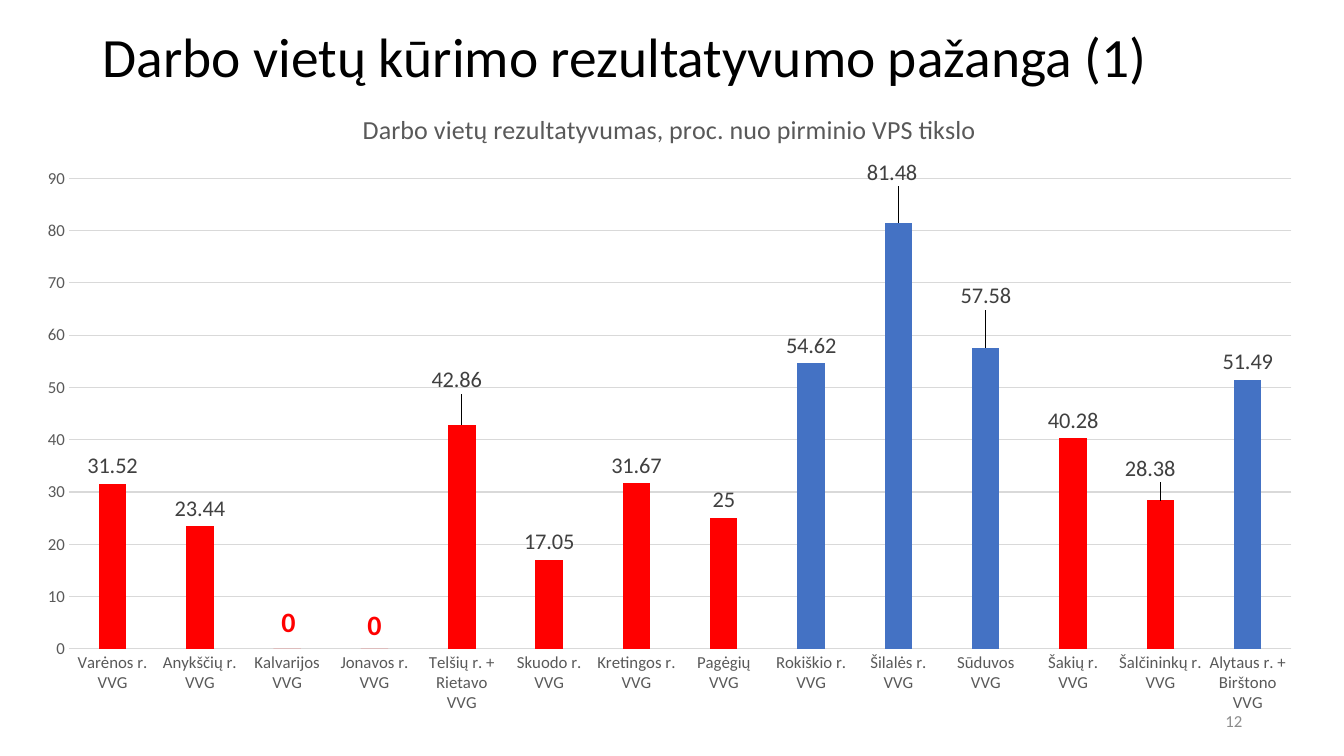
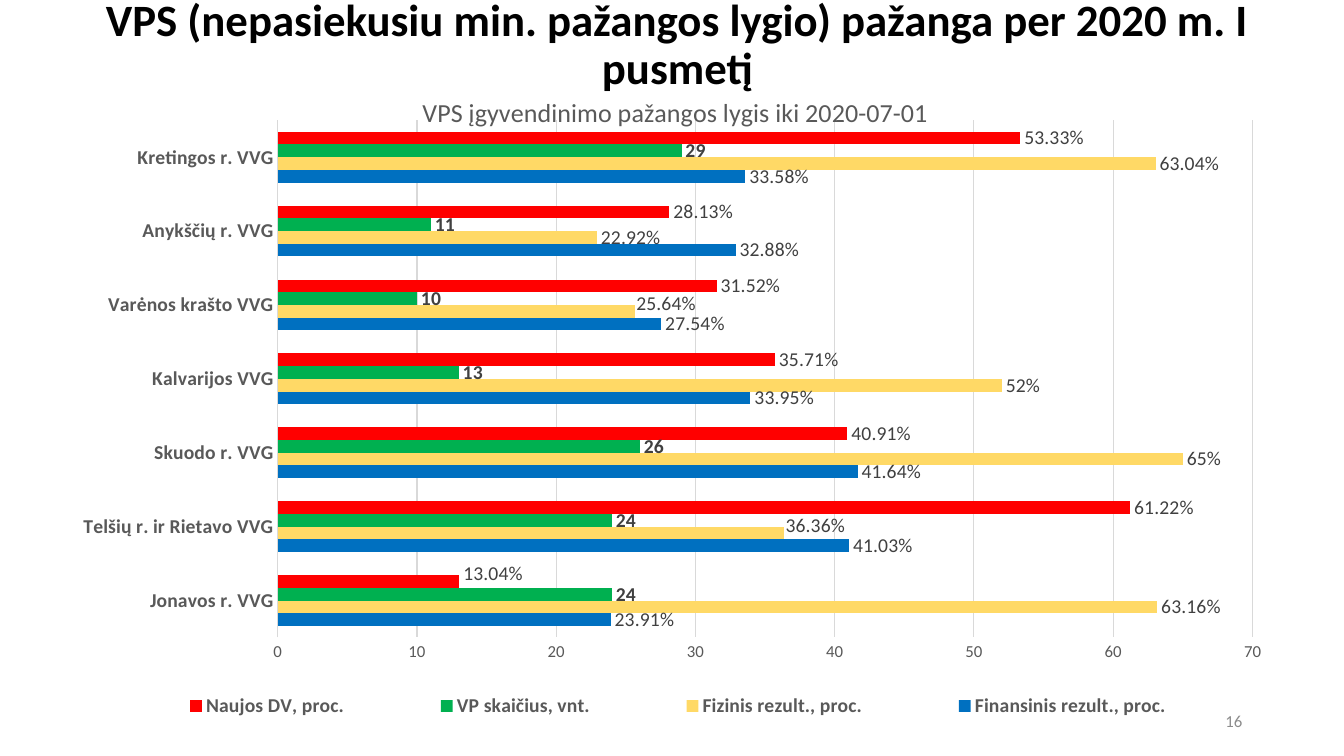
from dataclasses import dataclass, field
from typing import NamedTuple

from lxml import etree
from pptx import Presentation
from pptx.chart.data import CategoryChartData
from pptx.dml.color import RGBColor
from pptx.enum.chart import XL_CHART_TYPE, XL_LABEL_POSITION, XL_LEGEND_POSITION, XL_TICK_MARK
from pptx.enum.text import MSO_ANCHOR, PP_ALIGN
from pptx.oxml.ns import qn
from pptx.util import Inches, Pt

# Shared style
FONT = "Calibri"
BLACK = RGBColor(0x00, 0x00, 0x00)
DARK = RGBColor(0x40, 0x40, 0x40)
GREY = RGBColor(0x59, 0x59, 0x59)
NUMBER_GREY = RGBColor(0x8C, 0x8C, 0x8C)
RULE = RGBColor(0xD9, 0xD9, 0xD9)
RED = RGBColor(0xFF, 0x00, 0x00)
GREEN = RGBColor(0x00, 0xB0, 0x50)
YELLOW = RGBColor(0xFF, 0xD9, 0x66)
BLUE = RGBColor(0x00, 0x70, 0xC0)
GOAL_BLUE = RGBColor(0x44, 0x72, 0xC4)

COLUMN = XL_CHART_TYPE.COLUMN_CLUSTERED
BAR = XL_CHART_TYPE.BAR_CLUSTERED
OUTSIDE = XL_LABEL_POSITION.OUTSIDE_END
BOTTOM = XL_LEGEND_POSITION.BOTTOM
NO_TICK = XL_TICK_MARK.NONE
MIDDLE = MSO_ANCHOR.MIDDLE
LEFT, CENTER, RIGHT = PP_ALIGN.LEFT, PP_ALIGN.CENTER, PP_ALIGN.RIGHT

WIDTH, HEIGHT = Inches(13.33), Inches(7.5)
GOAL = 50  # percent from which a column turns blue
PERCENT = 'General"%"'
CHART_2012 = "http://schemas.microsoft.com/office/drawing/2012/chart"
LABEL_EXTENSION = "{CE6537A1-D6FC-4f65-9D91-7224C49458BB}"


class Area(NamedTuple):
    """Left, top, width and height in percent of the slide or chart."""
    left: float
    top: float
    width: float
    height: float

    def lengths(self) -> tuple[int, int, int, int]:
        return (int(WIDTH * self.left / 100), int(HEIGHT * self.top / 100),
                int(WIDTH * self.width / 100), int(HEIGHT * self.height / 100))


class Style(NamedTuple):
    size: float
    color: RGBColor
    bold: bool = False


class Nudge(NamedTuple):
    """Label shift in percent of the chart."""
    x: float
    y: float
    style: Style


@dataclass
class Series:
    name: str
    values: list[float]
    color: RGBColor
    label: Style
    number_format: str = "General"
    goal_color: RGBColor | None = None
    nudges: dict[int, Nudge] = field(default_factory=dict)


@dataclass
class ChartPlan:
    kind: int
    area: Area
    title: str
    title_at: tuple[float, float]
    plot: Area
    categories: list[str]
    series: list[Series]
    category_style: Style
    maximum: int
    gap: int
    overlap: int
    legend: Area | None = None


@dataclass
class PagePlan:
    title: str
    title_area: Area
    title_style: Style
    title_align: int
    number: str
    chart: ChartPlan


NUMBER_AREA = Area(70.67, 92.67, 22.5, 5.33)
NUMBER_STYLE = Style(12, NUMBER_GREY)
AXIS_STYLE = Style(12, GREY)
CHART_TITLE = Style(18.6, GREY)
COLUMN_LABEL = Style(16, DARK)
ZERO_LABEL = Style(20, RED, True)
BAR_LABEL = Style(14, DARK)
BOLD_LABEL = Style(14, DARK, True)
BOLD_GREY = Style(14, GREY, True)

RESULT_TITLE = "Darbo vietų rezultatyvumas, proc. nuo pirminio VPS tikslo"

PAGES = [
    PagePlan(
        "Darbo vietų kūrimo rezultatyvumo pažanga (1)",
        Area(6.9, 4, 86.27, 7.87), Style(39.6, BLACK), LEFT, "12",
        ChartPlan(
            COLUMN, Area(1.65, 11.87, 96.47, 84.27), RESULT_TITLE, (25.9, 2.7),
            Area(3.6, 13.9, 94.3, 73.9),
            ["Varėnos r. VVG", "Anykščių r. VVG", "Kalvarijos VVG", "Jonavos r. VVG",
             "Telšių r. + Rietavo VVG", "Skuodo r. VVG", "Kretingos r. VVG",
             "Pagėgių VVG", "Rokiškio r. VVG", "Šilalės r. VVG", "Sūduvos VVG",
             "Šakių r. VVG", "Šalčininkų r. VVG", "Alytaus r. + Birštono VVG"],
            [Series(RESULT_TITLE,
                    [31.52, 23.44, 0, 0, 42.86, 17.05, 31.67, 25, 54.62, 81.48,
                     57.58, 40.28, 28.38, 51.49],
                    RED, COLUMN_LABEL, goal_color=GOAL_BLUE,
                    nudges={2: Nudge(0.1, -0.8, ZERO_LABEL),
                            3: Nudge(0, -0.3, ZERO_LABEL),
                            4: Nudge(-0.4, -4.2, COLUMN_LABEL),
                            9: Nudge(-0.5, -5, COLUMN_LABEL),
                            10: Nudge(0, -5.3, COLUMN_LABEL),
                            12: Nudge(-0.8, -2.2, COLUMN_LABEL)})],
            AXIS_STYLE, 90, 219, -27)),
    PagePlan(
        "VPS (nepasiekusiu min. pažangos lygio) pažanga per 2020 m. I pusmetį",
        Area(1.8, 2.13, 97.22, 7.87), Style(32, BLACK, True), CENTER, "16",
        ChartPlan(
            BAR, Area(5.18, 11.87, 90.55, 84.27),
            "VPS įgyvendinimo pažangos lygis iki 2020-07-01", (28.6, 0),
            Area(17.1, 4.8, 80.1, 81.2),
            ["Jonavos r. VVG", "Telšių r. ir Rietavo VVG", "Skuodo r. VVG",
             "Kalvarijos VVG", "Varėnos krašto VVG", "Anykščių r. VVG",
             "Kretingos r. VVG"],
            [Series("Finansinis rezult., proc.",
                    [23.91, 41.03, 41.64, 33.95, 27.54, 32.88, 33.58],
                    BLUE, BAR_LABEL, PERCENT),
             Series("Fizinis rezult., proc.",
                    [63.16, 36.36, 65, 52, 25.64, 22.92, 63.04],
                    YELLOW, BAR_LABEL, PERCENT,
                    nudges={1: Nudge(-0.2, -1.1, BAR_LABEL),
                            4: Nudge(-0.2, -1.2, BAR_LABEL)}),
             Series("VP skaičius, vnt.", [24, 24, 26, 13, 10, 11, 29],
                    GREEN, BOLD_LABEL),
             Series("Naujos DV, proc.",
                    [13.04, 61.22, 40.91, 35.71, 31.52, 28.13, 53.33],
                    RED, BAR_LABEL, PERCENT,
                    nudges={0: Nudge(0, -1.2, BAR_LABEL)})],
            BOLD_GREY, 70, 182, 0, Area(2.5, 94, 95, 5.5))),
]


def set_font(font, style: Style) -> None:
    font.name = FONT
    font.size = Pt(style.size)
    font.bold = style.bold
    font.color.rgb = style.color


def add_text(page, area: Area, text: str, style: Style, align: int,
             spacing: float = 1.0) -> None:
    frame = page.shapes.add_textbox(*area.lengths()).text_frame
    frame.word_wrap = True
    frame.vertical_anchor = MIDDLE
    para = frame.paragraphs[0]
    para.text = text
    para.alignment = align
    para.line_spacing = spacing
    set_font(para.font, style)


def make_layout(settings: dict[str, str | float]):
    """Manual chart layout; numbers are percent of the chart."""
    layout = etree.Element(qn("c:layout"))
    manual = etree.SubElement(layout, qn("c:manualLayout"))
    for tag, value in settings.items():
        text = value if isinstance(value, str) else f"{value / 100:.4f}"
        etree.SubElement(manual, qn(f"c:{tag}")).set("val", text)
    return layout


def place(element, after: str, settings: dict[str, str | float]) -> None:
    """Put a manual layout into a chart part, behind the named child if any."""
    for old in element.findall(qn("c:layout")):
        element.remove(old)
    before = element.find(qn(after))
    index = 0 if before is None else element.index(before) + 1
    element.insert(index, make_layout(settings))


def edge_layout(area: Area) -> dict[str, str | float]:
    return {"xMode": "edge", "yMode": "edge", "x": area.left, "y": area.top,
            "w": area.width, "h": area.height}


def hide_leader_lines(labels) -> None:
    extensions = etree.SubElement(labels, qn("c:extLst"))
    extension = etree.SubElement(extensions, qn("c:ext"), nsmap={"c15": CHART_2012},
                                 uri=LABEL_EXTENSION)
    etree.SubElement(extension, f"{{{CHART_2012}}}showLeaderLines", val="0")


def style_series(series, plan: Series) -> None:
    series.invert_if_negative = False
    series.format.fill.solid()
    series.format.fill.fore_color.rgb = plan.color
    series.format.line.fill.background()
    labels = series.data_labels
    labels.show_value = True
    labels.number_format = plan.number_format
    labels.number_format_is_linked = False
    labels.position = OUTSIDE
    set_font(labels.font, plan.label)

    if plan.goal_color is not None:
        for index, value in enumerate(plan.values):
            if value >= GOAL:
                fill = series.points[index].format.fill
                fill.solid()
                fill.fore_color.rgb = plan.goal_color

    # Labels moved off their usual place
    for index, nudge in plan.nudges.items():
        label = series.points[index].data_label
        set_font(label.font, nudge.style)
        label.position = OUTSIDE
        element = series._element.xpath(f"c:dLbls/c:dLbl[c:idx/@val='{index}']")[0]
        place(element, "c:idx", {"x": nudge.x, "y": nudge.y})
        number = etree.Element(qn("c:numFmt"), formatCode=plan.number_format, sourceLinked="0")
        element.insert(2, number)
    hide_leader_lines(series._element.find(qn("c:dLbls")))


def style_axes(chart, plan: ChartPlan) -> None:
    category, value = chart.category_axis, chart.value_axis
    for axis, style in ((category, plan.category_style), (value, AXIS_STYLE)):
        axis.major_tick_mark = axis.minor_tick_mark = NO_TICK
        set_font(axis.tick_labels.font, style)
    category.has_major_gridlines = False
    value.has_major_gridlines = True
    for line in (category.format.line, value.major_gridlines.format.line):
        line.color.rgb = RULE
        line.width = Pt(0.75)
    value.format.line.fill.background()
    value.minimum_scale, value.maximum_scale, value.major_unit = 0, plan.maximum, 10


def add_chart(page, plan: ChartPlan) -> None:
    data = CategoryChartData()
    data.categories = plan.categories
    for series in plan.series:
        data.add_series(series.name, series.values)
    chart = page.shapes.add_chart(plan.kind, *plan.area.lengths(), data).chart
    set_font(chart.font, Style(10, BLACK))

    # Title
    chart.has_title = True
    title = chart.chart_title
    title.include_in_layout = False
    para = title.text_frame.paragraphs[0]
    para.text = plan.title
    set_font(para.font, CHART_TITLE)
    left, top = plan.title_at
    place(title._element, "c:tx", {"xMode": "edge", "yMode": "edge", "x": left, "y": top})

    # Plot
    plot = chart.plots[0]
    plot.vary_by_categories = False
    plot.gap_width, plot.overlap = plan.gap, plan.overlap
    place(chart._chartSpace.chart.plotArea, "c:none",
          {"layoutTarget": "inner"} | edge_layout(plan.plot))
    style_axes(chart, plan)
    for series, series_plan in zip(plot.series, plan.series):
        style_series(series, series_plan)

    # Legend
    chart.has_legend = plan.legend is not None
    if plan.legend is not None:
        legend = chart.legend
        legend.position = BOTTOM
        legend.include_in_layout = False
        set_font(legend.font, BOLD_GREY)
        place(legend._element, "c:legendPos", edge_layout(plan.legend))


def main() -> None:
    deck = Presentation()
    deck.slide_width, deck.slide_height = WIDTH, HEIGHT
    for plan in PAGES:
        page = deck.slides.add_slide(deck.slide_layouts[6])
        add_text(page, plan.title_area, plan.title, plan.title_style, plan.title_align, 0.9)
        add_chart(page, plan.chart)
        add_text(page, NUMBER_AREA, plan.number, NUMBER_STYLE, RIGHT)
    deck.save("out.pptx")


if __name__ == "__main__":
    main()
